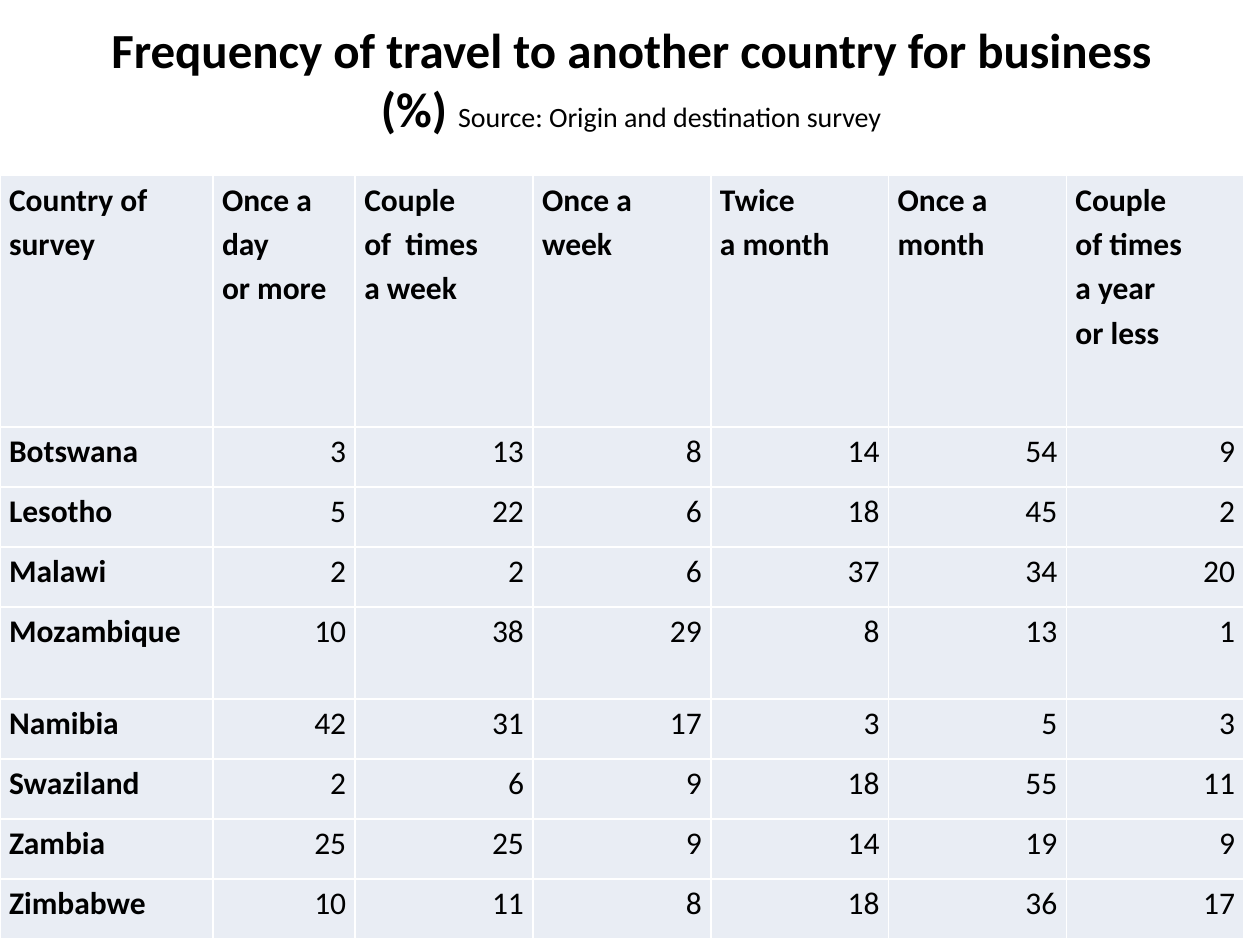
from pptx import Presentation
from pptx.dml.color import RGBColor
from pptx.enum.text import MSO_ANCHOR as Anchor, PP_ALIGN as Align
from pptx.oxml import parse_xml
from pptx.oxml.ns import nsdecls
from pptx.util import Pt

BLACK = RGBColor(0x00, 0x00, 0x00)
WHITE = RGBColor(0xFF, 0xFF, 0xFF)
PALE_BLUE = RGBColor(0xE9, 0xED, 0xF4)
FONT = "Calibri"

TITLE = "Frequency of travel to another country for business (%) "
SOURCE = "Source: Origin and destination survey"
HEADINGS = [
    ["Country of survey"],
    ["Once a", "day", "or more"],
    ["Couple", "of  times", "a week"],
    ["Once a", "week"],
    ["Twice", "a month"],
    ["Once a", "month"],
    ["Couple", "of times", "a year", "or less"],
]
SURVEY = {
    "Botswana": [3, 13, 8, 14, 54, 9],
    "Lesotho": [5, 22, 6, 18, 45, 2],
    "Malawi": [2, 2, 6, 37, 34, 20],
    "Mozambique": [10, 38, 29, 8, 13, 1],
    "Namibia": [42, 31, 17, 3, 5, 3],
    "Swaziland": [2, 6, 9, 18, 55, 11],
    "Zambia": [25, 25, 9, 14, 19, 9],
    "Zimbabwe": [10, 11, 8, 18, 36, 17],
}
COLUMN_WIDTHS = [121.7, 81.3] + [101.6] * 5
HEADING_HEIGHT, ROW_HEIGHT, TALL_HEIGHT = 143.6, 34.3, 52.5


def add_span(para, text, size, bold):
    """Add one run of black text to a paragraph."""
    span = para.add_run()
    span.text = text
    span.font.name = FONT
    span.font.size = Pt(size)
    span.font.bold = bold
    span.font.color.rgb = BLACK


def add_title(page, left, top, width, height):
    """Place the centred title with its source note."""
    box = page.shapes.add_textbox(Pt(left), Pt(top), Pt(width), Pt(height))
    frame = box.text_frame
    frame.word_wrap = True
    frame.vertical_anchor = Anchor.MIDDLE
    para = frame.paragraphs[0]
    para.alignment = Align.CENTER
    add_span(para, TITLE, 28, True)
    add_span(para, SOURCE, 16, False)


def add_borders(cell):
    """Give a cell thin white lines on all four sides."""
    properties = cell._tc.get_or_add_tcPr()
    for index, side in enumerate(("lnL", "lnR", "lnT", "lnB")):
        line = parse_xml(
            f'<a:{side} {nsdecls("a")} w="{Pt(1)}"><a:solidFill>'
            f'<a:srgbClr val="{WHITE}"/></a:solidFill></a:{side}>'
        )
        properties.insert(index, line)


def fill_cell(cell, lines, bold, align):
    """Write lines into a cell, one paragraph each, and style it."""
    cell.margin_left = cell.margin_right = Pt(5.2)
    cell.margin_top = cell.margin_bottom = Pt(0)
    cell.fill.solid()
    cell.fill.fore_color.rgb = PALE_BLUE
    add_borders(cell)
    frame = cell.text_frame
    for index, text in enumerate(lines):
        para = frame.add_paragraph() if index else frame.paragraphs[0]
        para.alignment = align
        para.line_spacing = 1.15
        add_span(para, text, 18, bold)


def add_survey_table(page, left, top):
    """Place the table of travel frequency by country."""
    heights = [HEADING_HEIGHT] + [
        TALL_HEIGHT if country == "Mozambique" else ROW_HEIGHT for country in SURVEY
    ]
    table = page.shapes.add_table(
        len(heights), len(COLUMN_WIDTHS), Pt(left), Pt(top),
        Pt(sum(COLUMN_WIDTHS)), Pt(sum(heights)),
    ).table
    table.horz_banding = False
    for column, width in zip(table.columns, COLUMN_WIDTHS):
        column.width = Pt(width)
    for row, height in zip(table.rows, heights):
        row.height = Pt(height)
    for column, lines in enumerate(HEADINGS):
        fill_cell(table.cell(0, column), lines, True, Align.LEFT)
    for row, (country, values) in enumerate(SURVEY.items(), 1):
        fill_cell(table.cell(row, 0), [country], True, Align.LEFT)
        for column, value in enumerate(values, 1):
            fill_cell(table.cell(row, column), [str(value)], False, Align.RIGHT)


def main():
    """Build the slide and save it."""
    deck = Presentation()
    deck.slide_width, deck.slide_height = Pt(720), Pt(540)
    page = deck.slides.add_slide(deck.slide_layouts[6])
    add_title(page, 36.7, 0, 648, 90)
    add_survey_table(page, 0, 100.4)
    deck.save("out.pptx")


if __name__ == "__main__":
    main()
